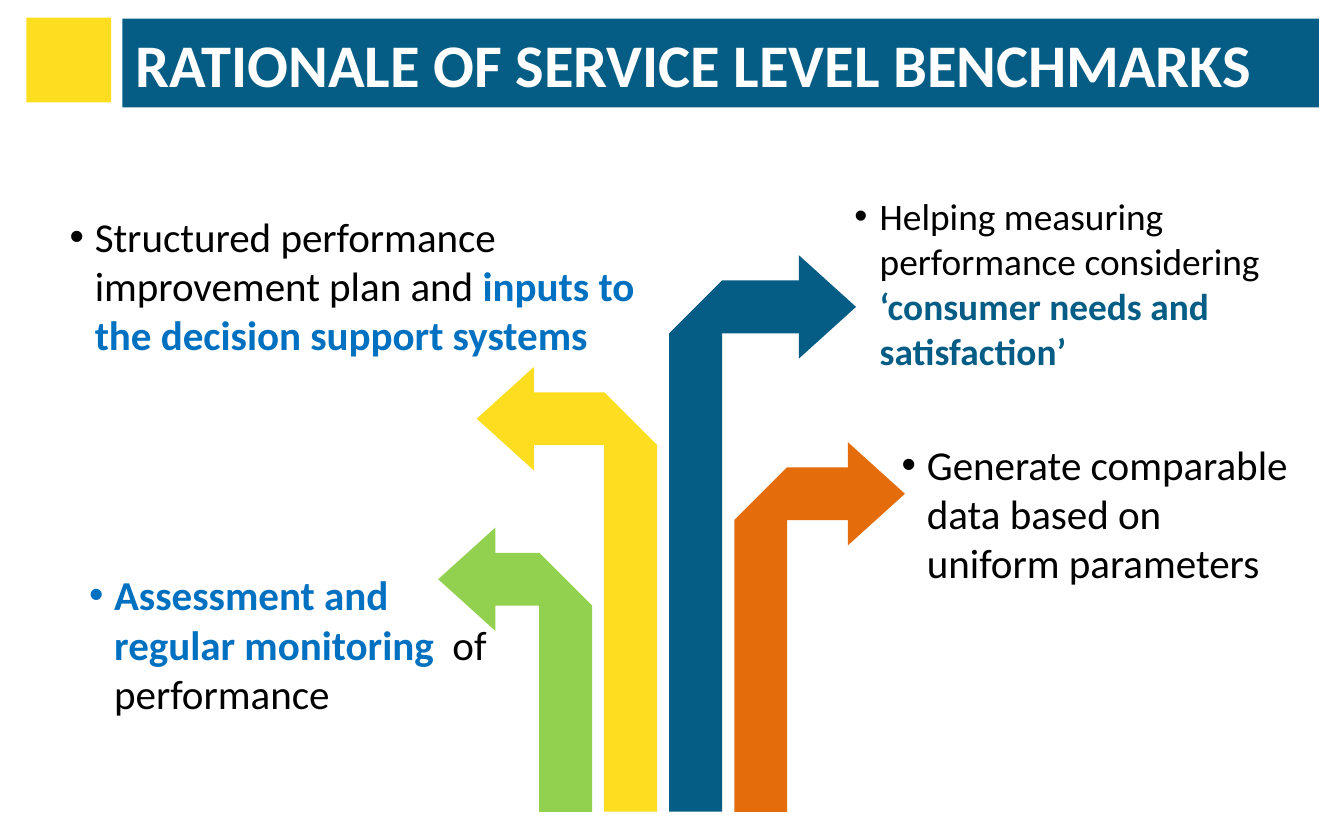
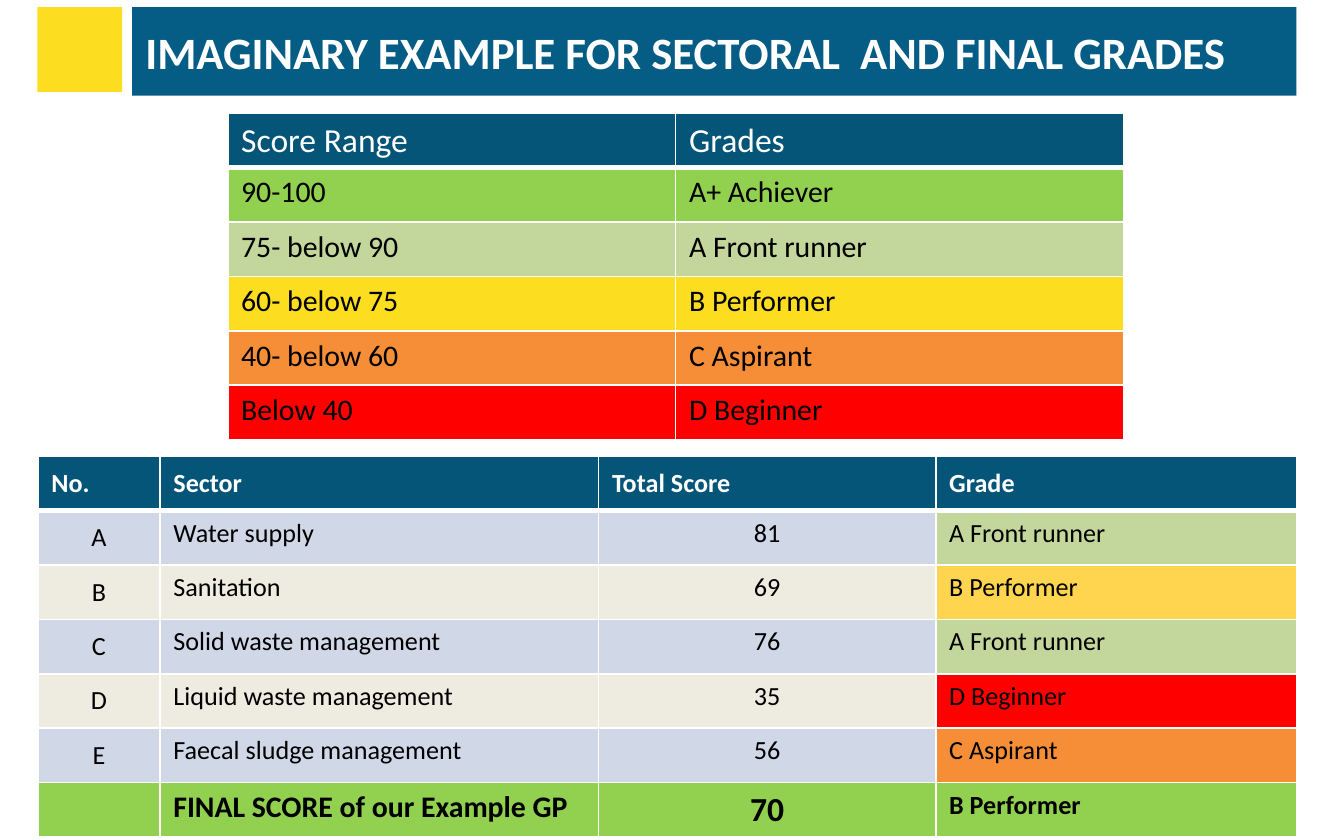
import dataclasses

import pptx
import pptx.dml.color
import pptx.enum.shapes
import pptx.enum.text
import pptx.oxml.ns
import pptx.util
from lxml import etree

Pt = pptx.util.Pt
CENTER = pptx.enum.text.PP_ALIGN.CENTER
LEFT = pptx.enum.text.PP_ALIGN.LEFT
MIDDLE = pptx.enum.text.MSO_ANCHOR.MIDDLE
TOP = pptx.enum.text.MSO_ANCHOR.TOP


@dataclasses.dataclass(frozen=True)
class Theme:
    font: str = "Calibri"
    white: str = "FFFFFF"
    black: str = "000000"
    teal: str = "055D85"
    header: str = "055579"
    blue: str = "0070C0"
    yellow: str = "FCDD20"
    amber: str = "FFD54F"
    orange: str = "E46C0A"
    light_orange: str = "F68E38"
    green: str = "92D050"
    sage: str = "C3D69B"
    red: str = "FF0000"
    pale_blue: str = "D0D8E8"
    cream: str = "EEECE1"
    title_large: float = 32.4
    title_small: float = 24
    body: float = 22
    body_small: float = 20
    grade_header: float = 18
    grade_text: float = 16
    sector_text: float = 14
    total_label: float = 16
    total_score: float = 18


THEME = Theme()
SQUARE_SIDE = 45.4
BAND_HEIGHT = 47.5
ROW_HEIGHT = 29.15
STEM_WIDTH = 28.3
STEM_STEP = 34.83
STEM_LEFT = 288.9
STEM_BOTTOM = 434.9
HEAD_LENGTH = 30.6
HEAD_OVERLAP = 3.2
HEAD_HALF = 27.7


def color(value):
    return pptx.dml.color.RGBColor.from_string(value)


def add_span(para, text, size, ink=THEME.black, bold=False):
    span = para.add_run()
    span.text = text
    span.font.name = THEME.font
    span.font.size = Pt(size)
    span.font.bold = bold
    span.font.color.rgb = color(ink)


def paint(shape, fill):
    shape.shadow.inherit = False
    shape.fill.solid()
    shape.fill.fore_color.rgb = color(fill)
    shape.line.fill.background()


def add_rectangle(page, left, top, width, height, fill):
    kind = pptx.enum.shapes.MSO_SHAPE.RECTANGLE
    box = page.shapes.add_shape(kind, Pt(left), Pt(top), Pt(width), Pt(height))
    paint(box, fill)
    return box


def add_title(page, text, size, band, square):
    left, top, width = band
    box = add_rectangle(page, left, top, width, BAND_HEIGHT, THEME.teal)
    box.text_frame.word_wrap = True
    box.text_frame.vertical_anchor = MIDDLE
    para = box.text_frame.paragraphs[0]
    para.alignment = LEFT
    add_span(para, text, size, THEME.white, True)
    add_rectangle(page, *square, SQUARE_SIDE, SQUARE_SIDE, THEME.yellow)


def add_bullet(page, left, top, width, height, size, spans):
    box = page.shapes.add_textbox(Pt(left), Pt(top), Pt(width), Pt(height))
    box.text_frame.word_wrap = True
    para = box.text_frame.paragraphs[0]
    para.space_before = Pt(size * 0.2)
    properties = para._p.get_or_add_pPr()
    properties.set("marL", str(Pt(13.5)))
    properties.set("indent", str(Pt(-13.5)))
    bullet_font = etree.SubElement(properties, pptx.oxml.ns.qn("a:buFont"))
    bullet_font.set("typeface", "Arial")
    bullet = etree.SubElement(properties, pptx.oxml.ns.qn("a:buChar"))
    bullet.set("char", "•")
    for text, ink, bold in spans:
        add_span(para, text, size, ink, bold)


def add_outline(group, points, fill):
    start, *others = [(Pt(x), Pt(y)) for x, y in points]
    builder = group.shapes.build_freeform(*start)
    builder.add_line_segments(others, close=True)
    paint(builder.convert_to_shape(), fill)


def add_turn_arrow(page, column, top, tip, fill):
    left = STEM_LEFT + column * STEM_STEP
    right = left + STEM_WIDTH
    toward = 1 if tip > right else -1
    outer, inner = (left, right) if toward == 1 else (right, left)
    bend = top + STEM_WIDTH
    middle = top + STEM_WIDTH / 2
    head = tip - toward * HEAD_LENGTH
    arm = head + toward * HEAD_OVERLAP
    group = page.shapes.add_group_shape()
    add_outline(group, [(inner, top), (inner, STEM_BOTTOM),
                        (outer, STEM_BOTTOM), (outer, bend)], fill)
    add_outline(group, [(arm, bend), (outer, bend), (inner, top), (arm, top)], fill)
    add_outline(group, [(tip, middle), (head, middle - HEAD_HALF),
                        (head, middle + HEAD_HALF)], fill)


def set_borders(cell, bottom):
    properties = cell._tc.get_or_add_tcPr()
    widths = {"lnL": 1, "lnR": 1, "lnT": 1, "lnB": bottom}
    for position, (side, width) in enumerate(widths.items()):
        line = etree.Element(pptx.oxml.ns.qn(f"a:{side}"), w=str(Pt(width)))
        fill = etree.SubElement(line, pptx.oxml.ns.qn("a:solidFill"))
        etree.SubElement(fill, pptx.oxml.ns.qn("a:srgbClr"), val=THEME.white)
        properties.insert(position, line)


def add_grid(page, left, top, columns, row_count):
    frame = page.shapes.add_table(row_count, len(columns), Pt(left), Pt(top),
                                  Pt(sum(columns)), Pt(ROW_HEIGHT * row_count))
    table = frame.table
    table.first_row = False
    table.horz_banding = False
    for column, width in zip(table.columns, columns):
        column.width = Pt(width)
    for row in table.rows:
        row.height = Pt(ROW_HEIGHT)
    return table


def fill_cell(cell, text, fill, size, ink=THEME.black, bold=False,
              align=LEFT, anchor=TOP, bottom=1):
    cell.fill.solid()
    cell.fill.fore_color.rgb = color(fill)
    cell.vertical_anchor = anchor
    set_borders(cell, bottom)
    if text:
        para = cell.text_frame.paragraphs[0]
        para.alignment = align
        add_span(para, text, size, ink, bold)


def fill_header(table, labels, size, bold, anchor):
    for column, label in enumerate(labels):
        fill_cell(table.cell(0, column), label, THEME.header, size, THEME.white,
                  bold, anchor=anchor, bottom=3)


def add_grade_table(page):
    grades = [
        ("90-100", "A+ Achiever", THEME.green),
        ("75- below 90", "A Front runner", THEME.sage),
        ("60- below 75", "B Performer", THEME.yellow),
        ("40- below 60", "C Aspirant", THEME.light_orange),
        ("Below 40", "D Beginner", THEME.red),
    ]
    table = add_grid(page, 122, 60.7, [240, 240], len(grades) + 1)
    fill_header(table, ["Score Range", "Grades"], THEME.grade_header, False, TOP)
    for row, (*texts, fill) in enumerate(grades, 1):
        for column, text in enumerate(texts):
            fill_cell(table.cell(row, column), text, fill, THEME.grade_text)


def add_sector_table(page):
    sectors = [
        ("A", "Water supply", "81", "A Front runner", THEME.sage),
        ("B", "Sanitation", "69", "B Performer", THEME.amber),
        ("C", "Solid waste management", "76", "A Front runner", THEME.sage),
        ("D", "Liquid waste management", "35", "D Beginner", THEME.red),
        ("E", "Faecal sludge management", "56", "C Aspirant", THEME.light_orange),
    ]
    total = [
        ("", THEME.sector_text),
        ("FINAL SCORE of our Example GP", THEME.total_label),
        ("70", THEME.total_score),
        ("B Performer", THEME.sector_text),
    ]
    aligns = [CENTER, LEFT, CENTER, LEFT]
    anchors = [MIDDLE, TOP, TOP, TOP]
    table = add_grid(page, 20.3, 244.4, [65.4, 235, 180.6, 193.6], len(sectors) + 2)
    fill_header(table, ["No.", "Sector", "Total Score", "Grade"],
                THEME.sector_text, True, MIDDLE)
    for row, (*texts, grade_fill) in enumerate(sectors, 1):
        band = THEME.pale_blue if row % 2 else THEME.cream
        fills = [band, band, band, grade_fill]
        for column, text in enumerate(texts):
            fill_cell(table.cell(row, column), text, fills[column], THEME.sector_text,
                      align=aligns[column], anchor=anchors[column])
    for column, (text, size) in enumerate(total):
        fill_cell(table.cell(len(sectors) + 1, column), text, THEME.green, size,
                  bold=True, align=aligns[column])


def build_rationale(page):
    add_title(page, "RATIONALE OF SERVICE LEVEL BENCHMARKS", THEME.title_large,
              (65.5, 10, 641), (14.2, 9.5))
    arrows = [
        (2, 150.3, 458.6, THEME.teal),
        (1, 210.2, 255.4, THEME.yellow),
        (3, 250.4, 484.8, THEME.orange),
        (0, 296.2, 234.8, THEME.green),
    ]
    for arrow in arrows:
        add_turn_arrow(page, *arrow)
    add_bullet(page, 450.7, 100, 283.7, 90.7, THEME.body_small, [
        ("Helping measuring performance considering ", THEME.black, False),
        ("‘consumer needs and satisfaction’", THEME.teal, True),
    ])
    add_bullet(page, 476, 231.8, 229, 118, THEME.body, [
        ("Generate comparable data based on uniform parameters", THEME.black, False),
    ])
    add_bullet(page, 40.6, 301.7, 234, 93.6, THEME.body, [
        ("Assessment and regular monitoring  ", THEME.blue, True),
        ("of performance", THEME.black, False),
    ])
    add_bullet(page, 30.2, 109.6, 329.8, 87, THEME.body, [
        ("Structured performance improvement plan and ", THEME.black, False),
        ("inputs to the decision support systems", THEME.blue, True),
    ])


def build_grades(page):
    add_title(page, "IMAGINARY EXAMPLE FOR SECTORAL  AND FINAL GRADES",
              THEME.title_small, (70.8, 3.8, 623.7), (20, 3.8))
    add_sector_table(page)
    add_grade_table(page)


def main():
    deck = pptx.Presentation()
    deck.slide_width = Pt(720)
    deck.slide_height = Pt(450)
    for build in (build_rationale, build_grades):
        build(deck.slides.add_slide(deck.slide_layouts[6]))
    deck.save("out.pptx")


if __name__ == "__main__":
    main()
